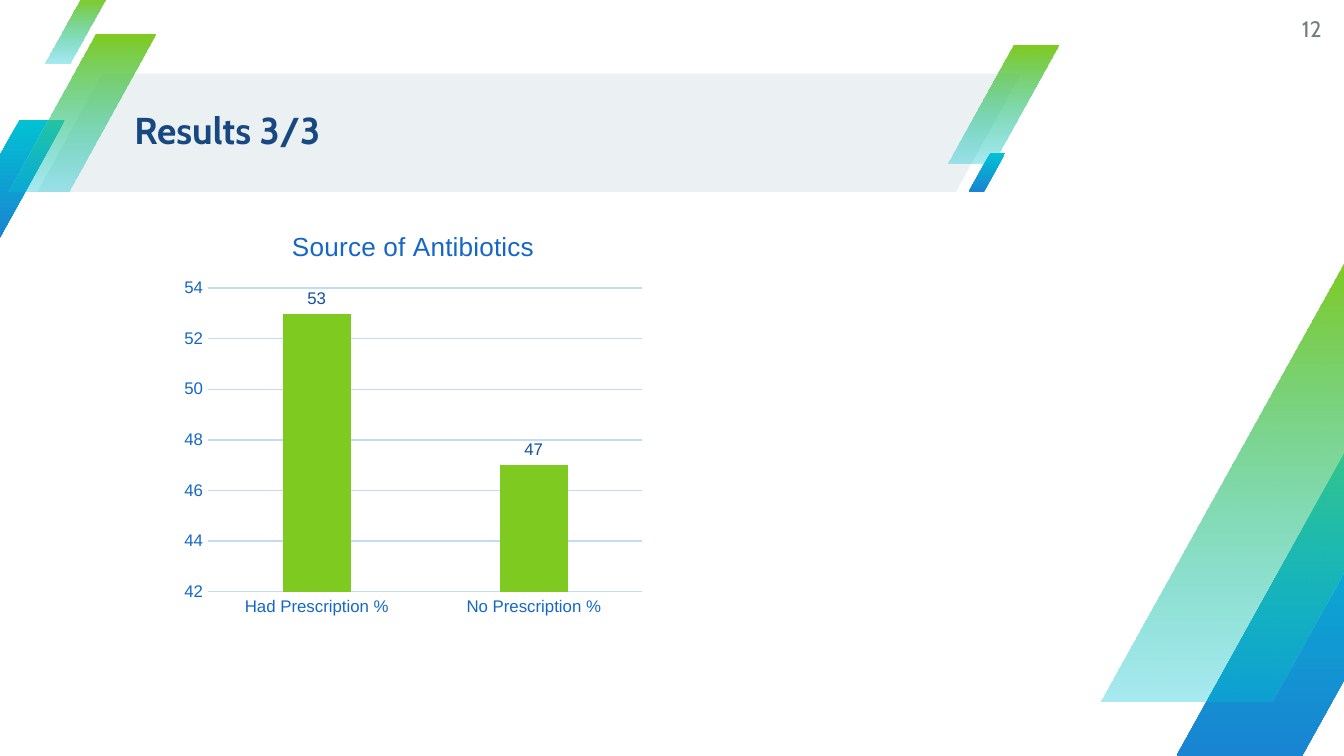
from lxml.etree import SubElement
from pptx import Presentation
from pptx.chart.data import CategoryChartData
from pptx.dml.color import RGBColor
from pptx.enum.chart import XL_CHART_TYPE as ChartType, XL_LABEL_POSITION as LabelPosition, XL_TICK_MARK as TickMark
from pptx.enum.shapes import MSO_SHAPE as Shape
from pptx.enum.text import MSO_ANCHOR as Anchor, PP_ALIGN as Align
from pptx.oxml.ns import qn
from pptx.util import Pt

GREEN, TEAL, BLUE = "7FCA20", "02C1D3", "1985D2"
GREEN_FADE = (GREEN, TEAL, 34)
TEAL_BLUE = (TEAL, BLUE, 100)


def color(hex_code):
    return RGBColor.from_string(hex_code)


class SlideBuilder:
    heading_font = "Cabin"
    chart_font = "Arial"
    axis_color = "1567C7"
    grid_color = "C2DBF9"
    stripe_ratio = 0.94

    def __init__(self, slide):
        self.slide = slide

    def style(self, font, name, size, hex_code, bold=False):
        font.name, font.size, font.bold = name, Pt(size), bold
        font.color.rgb = color(hex_code)

    def parallelogram(self, left, top, width, height, slant):
        shape = self.slide.shapes.add_shape(
            Shape.PARALLELOGRAM, Pt(left), Pt(top), Pt(width), Pt(height))
        shape.adjustments[0] = slant
        shape.shadow.inherit = False
        shape.line.fill.background()
        return shape

    def band(self, left, top, width, height, hex_code):
        band = self.parallelogram(left, top, width, height, 0.55)
        band.fill.solid()
        band.fill.fore_color.rgb = color(hex_code)

    def stripe(self, left, top, height, gradient):
        """Add a slanted stripe; gradient is (top colour, bottom colour, bottom opacity %)."""
        stripe = self.parallelogram(left, top, height * self.stripe_ratio, height, 0.59)
        upper, lower, opacity = gradient
        stripe.fill.gradient()
        stripe.fill.gradient_angle = 270
        for stop, position, hex_code in zip(stripe.fill.gradient_stops, (0, 1), (upper, lower)):
            stop.position = position
            stop.color.rgb = color(hex_code)
        if opacity < 100:
            lower_color = list(stripe._element.spPr.iter(qn("a:srgbClr")))[-1]
            SubElement(lower_color, qn("a:alpha"), val=str(opacity * 1000))

    def fill_text(self, frame, text, align):
        frame.word_wrap = True
        frame.vertical_anchor = Anchor.MIDDLE
        frame.margin_left = frame.margin_right = frame.margin_top = frame.margin_bottom = 0
        paragraph = frame.paragraphs[0]
        paragraph.text, paragraph.alignment = text, align
        return paragraph

    def title(self, text, left, top, width, height):
        title = self.slide.shapes.title
        title.left, title.top, title.width, title.height = map(Pt, (left, top, width, height))
        paragraph = self.fill_text(title.text_frame, text, Align.LEFT)
        paragraph.line_spacing = 0.9
        self.style(paragraph.font, self.heading_font, 20, "184880", bold=True)
        self.slide.shapes._spTree.append(title._element)  # in front of the band

    def page_number(self, text, left, top, width, height):
        box = self.slide.shapes.add_textbox(Pt(left), Pt(top), Pt(width), Pt(height))
        paragraph = self.fill_text(box.text_frame, text, Align.RIGHT)
        self.style(paragraph.font, self.heading_font, 12, "757C83")

    def axis(self, axis, line_format):
        axis.major_tick_mark = axis.minor_tick_mark = TickMark.NONE
        self.style(axis.tick_labels.font, self.chart_font, 9, self.axis_color)
        line_format.line.color.rgb = color(self.grid_color)
        line_format.line.width = Pt(0.75)

    def column_chart(self, heading, shares, left, top, width, height):
        data = CategoryChartData(number_format="0")
        data.categories = list(shares)
        data.add_series("Series 1", list(shares.values()))
        chart = self.slide.shapes.add_chart(
            ChartType.COLUMN_CLUSTERED, Pt(left), Pt(top), Pt(width), Pt(height), data).chart
        self.style(chart.font, self.chart_font, 10, "061E3A")
        chart.has_legend = False
        chart.has_title = True
        chart.chart_title.include_in_layout = False
        heading_line = chart.chart_title.text_frame.paragraphs[0]
        heading_line.text = heading
        self.style(heading_line.font, self.chart_font, 14, self.axis_color)

        categories, values = chart.category_axis, chart.value_axis
        self.axis(categories, categories.format)
        self.axis(values, values.major_gridlines.format)
        values.format.line.fill.background()
        values.minimum_scale, values.maximum_scale, values.major_unit = 42, 54, 2
        values.tick_labels.number_format = "0"
        values.tick_labels.number_format_is_linked = False

        plot = chart.plots[0]
        plot.gap_width, plot.overlap, plot.vary_by_categories = 219, -27, False
        columns = plot.series[0]
        columns.format.fill.solid()
        columns.format.fill.fore_color.rgb = color(GREEN)
        labels = columns.data_labels
        labels.show_value = True
        labels.position = LabelPosition.OUTSIDE_END
        labels.number_format, labels.number_format_is_linked = "0", False
        self.style(labels.font, self.chart_font, 9, "10529F")


def main():
    deck = Presentation()
    deck.slide_width, deck.slide_height = Pt(720), Pt(405)
    results = SlideBuilder(deck.slides.add_slide(deck.slide_layouts[5]))

    results.band(20, 39.4, 527, 63.4, "EBF0F3")
    for left, top, height, gradient in (
        (-24.7, 64.2, 63.4, TEAL_BLUE),
        (507.5, 24.2, 63.4, GREEN_FADE),
        (4.4, 18.5, 84.2, GREEN_FADE),
        (24, -1.2, 35.3, GREEN_FADE),
        (519, 82, 20.8, TEAL_BLUE),
        (630.3, 230.7, 174.3, TEAL_BLUE),
        (589.8, 138.4, 237.6, GREEN_FADE),
    ):
        results.stripe(left, top, height, gradient)

    results.page_number("12", 674, 0, 34, 31)
    results.title("Results 3/3", 72, 39, 474.5, 64)
    results.column_chart(
        "Source of Antibiotics", {"Had Prescription %": 53, "No Prescription %": 47},
        93.6, 112.3, 255.6, 222.5)
    deck.save("out.pptx")


if __name__ == "__main__":
    main()
